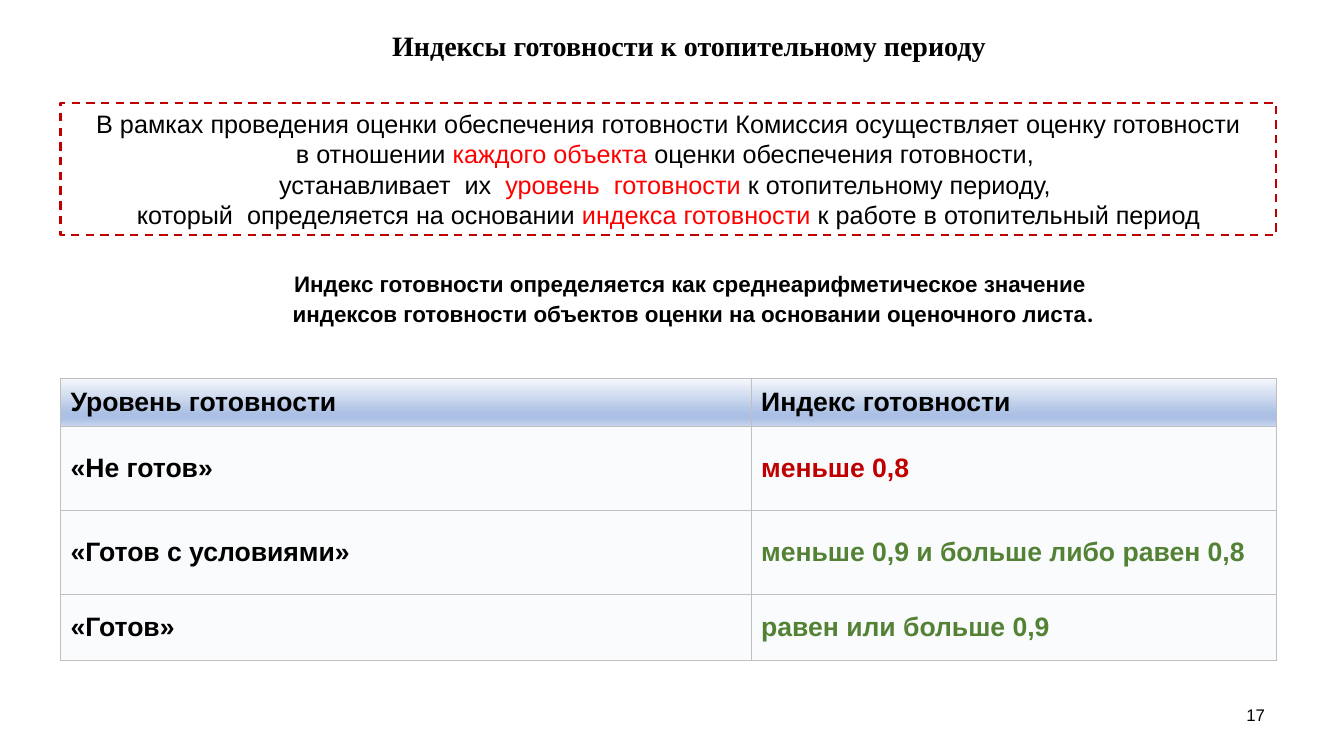
from dataclasses import dataclass
from lxml.etree import SubElement
from pptx import Presentation
from pptx.dml.color import RGBColor
from pptx.enum.dml import MSO_LINE
from pptx.enum.shapes import MSO_SHAPE
from pptx.enum.text import MSO_ANCHOR, PP_ALIGN
from pptx.oxml.ns import qn
from pptx.util import Inches, Pt


@dataclass(frozen=True)
class Theme:
    sans: str = "Arial"
    serif: str = "Times New Roman"
    stop_font: str = "Calibri"
    ink: str = "000000"
    accent: str = "FF0000"
    alarm: str = "C00000"
    good: str = "548235"
    grid: str = "BFBFBF"
    body_fill: str = "B4C7E7"
    body_opacity: int = 6
    header_stops: tuple = ((0, "F6F8FC"), (74, "ABC0E4"), (83, "ABC0E4"), (100, "C7D5ED"))
    title_size: int = 20
    body_size: int = 18
    table_size: int = 19
    note_size: int = 16
    number_size: int = 12


THEME = Theme()

RULE_LINES = [
    [("В рамках проведения оценки обеспечения готовности Комиссия осуществляет оценку готовности", THEME.ink)],
    [("в отношении ", THEME.ink), ("каждого объекта ", THEME.accent),
     ("оценки обеспечения готовности, ", THEME.ink)],
    [("устанавливает  их  ", THEME.ink), ("уровень  готовности ", THEME.accent),
     ("к отопительному периоду, ", THEME.ink)],
    [("который \u00a0определяется на основании ".replace("\u00a0", " "), THEME.ink),
     ("индекса готовности ", THEME.accent), ("к работе в отопительный период", THEME.ink)],
]
RULE_LINES[3][0] = ("который  определяется на основании ", THEME.ink)
NOTE_LINES = ["Индекс готовности определяется как среднеарифметическое значение ",
              "индексов готовности объектов оценки на основании оценочного листа"]
LEVELS = [
    ("Уровень готовности", "Индекс готовности", THEME.ink),
    ("«Не готов»", "меньше 0,8", THEME.alarm),
    ("«Готов с условиями»", "меньше 0,9 и больше либо равен 0,8", THEME.good),
    ("«Готов»", "равен или больше 0,9", THEME.good),
]
COLUMN_WIDTHS = (6.85, 5.21)
ROW_HEIGHTS = (0.48, 0.83, 0.83, 0.66)


def style(font, size, color=THEME.ink, name=THEME.sans, bold=False):
    font.name, font.size, font.bold = name, Pt(size), bold
    font.color.rgb = RGBColor.from_string(color)


def add_text(page, box, anchor=MSO_ANCHOR.TOP):
    """Add a wrapping text box and return its centred first paragraph."""
    frame = page.shapes.add_textbox(*map(Inches, box)).text_frame
    frame.word_wrap = True
    frame.vertical_anchor = anchor
    para = frame.paragraphs[0]
    para.alignment = PP_ALIGN.CENTER
    return para


def add_title(page, box):
    para = add_text(page, box, MSO_ANCHOR.MIDDLE)
    para.text = "Индексы готовности к отопительному периоду"
    style(para.font, THEME.title_size, name=THEME.serif, bold=True)


def add_rule(page, box):
    frame_shape = page.shapes.add_shape(MSO_SHAPE.RECTANGLE, *map(Inches, box))
    frame_shape.shadow.inherit = False
    frame_shape.fill.background()
    frame_shape.line.color.rgb = RGBColor.from_string(THEME.alarm)
    frame_shape.line.width = Pt(1.5)
    frame_shape.line.dash_style = MSO_LINE.DASH
    frame = frame_shape.text_frame
    frame.word_wrap = True
    para = frame.paragraphs[0]
    para.alignment = PP_ALIGN.CENTER
    for index, line in enumerate(RULE_LINES):
        if index:
            para.add_line_break()
        for text, color in line:
            span = para.add_run()
            span.text = text
            style(span.font, THEME.body_size, color)


def add_note(page, box):
    para = add_text(page, box)
    for index, line in enumerate(NOTE_LINES):
        if index:
            para.add_line_break()
        span = para.add_run()
        span.text = line
        style(span.font, THEME.note_size, bold=True)
    stop = para.add_run()
    stop.text = "."
    style(stop.font, THEME.body_size, name=THEME.stop_font, bold=True)


def add_color(parent, color):
    return SubElement(parent, qn("a:srgbClr"), val=color)


def paint_cell(cell, is_header):
    """Draw thin borders, then a gradient header or a pale tint."""
    props = cell._tc.get_or_add_tcPr()
    for side in ("a:lnL", "a:lnR", "a:lnT", "a:lnB"):
        border = SubElement(props, qn(side), w=str(Pt(0.25)))
        add_color(SubElement(border, qn("a:solidFill")), THEME.grid)
    if is_header:
        gradient = SubElement(props, qn("a:gradFill"), rotWithShape="1")
        stops = SubElement(gradient, qn("a:gsLst"))
        for position, color in THEME.header_stops:
            add_color(SubElement(stops, qn("a:gs"), pos=str(position * 1000)), color)
        SubElement(gradient, qn("a:lin"), ang=str(90 * 60000), scaled="0")
    else:
        tint = add_color(SubElement(props, qn("a:solidFill")), THEME.body_fill)
        SubElement(tint, qn("a:alpha"), val=str(THEME.body_opacity * 1000))


def add_levels(page, box):
    table = page.shapes.add_table(len(LEVELS), len(COLUMN_WIDTHS), *map(Inches, box)).table
    table.first_row = table.horz_banding = False
    for column, width in zip(table.columns, COLUMN_WIDTHS):
        column.width = Inches(width)
    for row, height in zip(table.rows, ROW_HEIGHTS):
        row.height = Inches(height)
    for row_index, (level, value, value_color) in enumerate(LEVELS):
        for column_index, (text, color) in enumerate(((level, THEME.ink), (value, value_color))):
            cell = table.cell(row_index, column_index)
            cell.vertical_anchor = MSO_ANCHOR.MIDDLE
            para = cell.text_frame.paragraphs[0]
            para.text = text
            style(para.font, THEME.table_size, color, bold=True)
            paint_cell(cell, row_index == 0)


def add_number(page, box):
    para = add_text(page, box, MSO_ANCHOR.MIDDLE)
    para.text = "17"
    style(para.font, THEME.number_size)


def main():
    deck = Presentation()
    deck.slide_width, deck.slide_height = Inches(13.33), Inches(7.5)
    page = deck.slides.add_slide(deck.slide_layouts[6])
    add_number(page, (12.25, 6.89, 0.41, 0.4))
    add_title(page, (0.52, 0.21, 12.63, 0.47))
    add_rule(page, (0.6, 1.02, 12.06, 1.31))
    add_levels(page, (0.6, 3.75, sum(COLUMN_WIDTHS), sum(ROW_HEIGHTS)))
    add_note(page, (0.71, 2.63, 12.33, 0.67))
    deck.save("out.pptx")


if __name__ == "__main__":
    main()
